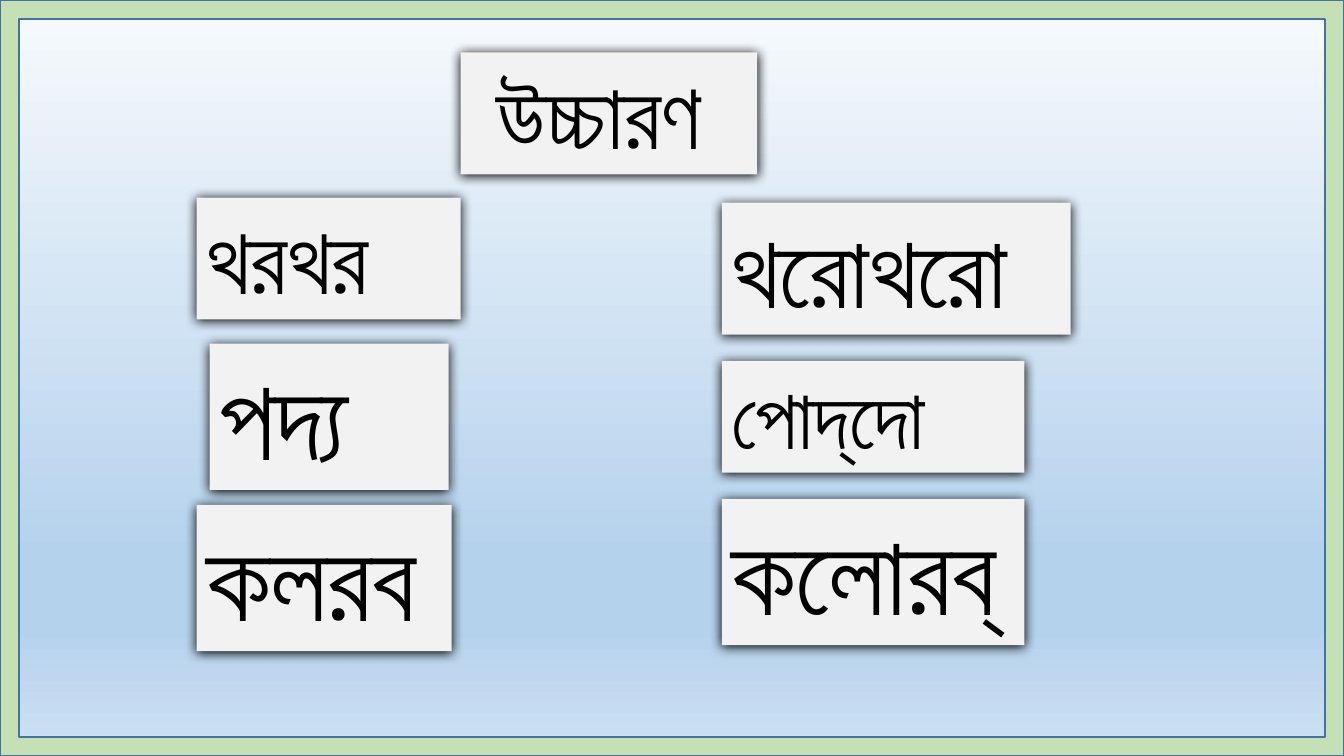
import pptx
import pptx.util
import pptx.dml.color
import pptx.enum.shapes
import pptx.enum.text
import pptx.oxml
import pptx.oxml.ns
from pptx.util import Inches

INK, CARD, WHITE = "000000", "F2F2F2", "FFFFFF"
FRAME_FILL, FRAME_LINE = "C5E0B4", "43739E"
BACKDROP = [(0, "F7FAFD"), (74, "B5D2EC"), (83, "B5D2EC"), (100, "CEE1F2")]
NON_JOINER = chr(0x200C)
WORDS = [
    (1.95, 1.96, 2.62, 1.21, 66, "থরথর"),
    (7.16, 2.01, 3.46, 1.31, 72, "থরোথরো"),
    (1.95, 5.01, 2.53, 1.45, 80, "কলরব"),
    (7.16, 4.95, 3, 1.45, 80, "কলোরব্" + NON_JOINER),
    (2.08, 3.41, 2.37, 1.45, 80, "পদ্য"),
    (7.16, 3.58, 3, 1.11, 60, "পোদ্" + NON_JOINER + "দো"),
]


def rgb(value):
    """Turn a hex string into a colour."""
    return pptx.dml.color.RGBColor.from_string(value)


def element(xml):
    """Parse a DrawingML fragment that uses the a: prefix."""
    head, rest = xml.split(">", 1)
    return pptx.oxml.parse_xml(f"{head} {pptx.oxml.ns.nsdecls('a')}>{rest}")


def set_backdrop(s, stops):
    """Fill the slide background with a vertical gradient."""
    fill = s.background.fill
    fill.gradient()
    fill.gradient_angle = 270
    gs_list = s.element.find(".//" + pptx.oxml.ns.qn("a:gsLst"))
    for gs in list(gs_list):
        gs_list.remove(gs)
    for percent, value in stops:
        gs_list.append(element(
            f'<a:gs pos="{percent * 1000}"><a:srgbClr val="{value}"/></a:gs>'))


def add_run(p, text, size, font):
    """Add a bold run with a thin white outline."""
    r = p.add_run()
    r.text = text
    r.font.size = pptx.util.Pt(size)
    r.font.bold = True
    r.font.name = font
    r.font.color.rgb = rgb(INK)
    r.font._element.insert(0, element(
        f'<a:ln w="9525"><a:solidFill><a:srgbClr val="{WHITE}"/></a:solidFill></a:ln>'))


def add_card(s, left, top, width, height, size, runs):
    """Add a shadowed text card holding (text, font) runs."""
    sp = s.shapes.add_textbox(Inches(left), Inches(top), Inches(width), Inches(height))
    sp.fill.solid()
    sp.fill.fore_color.rgb = rgb(CARD)
    sp.element.spPr.append(element(
        '<a:effectLst><a:outerShdw blurRad="107950" dist="12700" dir="5400000" algn="ctr">'
        f'<a:srgbClr val="{INK}"/></a:outerShdw></a:effectLst>'))
    tf = sp.text_frame
    tf.word_wrap = True
    tf.auto_size = pptx.enum.text.MSO_AUTO_SIZE.SHAPE_TO_FIT_TEXT
    for text, font in runs:
        add_run(tf.paragraphs[0], text, size, font)


def add_frame(s, width, height):
    """Add the border around the whole slide."""
    sp = s.shapes.add_shape(pptx.enum.shapes.MSO_SHAPE.FRAME, 0, 0, width, height)
    sp.adjustments[0] = 0.025
    sp.shadow.inherit = False
    sp.fill.solid()
    sp.fill.fore_color.rgb = rgb(FRAME_FILL)
    sp.line.color.rgb = rgb(FRAME_LINE)
    sp.line.width = pptx.util.Pt(1)


def main():
    """Build the pronunciation slide."""
    prs = pptx.Presentation()
    prs.slide_width, prs.slide_height = Inches(13.33), Inches(7.5)
    s = prs.slides.add_slide(prs.slide_layouts[6])
    set_backdrop(s, BACKDROP)
    for left, top, width, height, size, word in WORDS:
        add_card(s, left, top, width, height, size, [(word, "Roboto")])
    add_card(s, 4.57, 0.52, 2.94, 1.21, 66, [(" ", "Calibri"), ("উচ্চারণ", "Roboto")])
    add_frame(s, prs.slide_width, prs.slide_height)
    prs.save("out.pptx")


if __name__ == "__main__":
    main()
